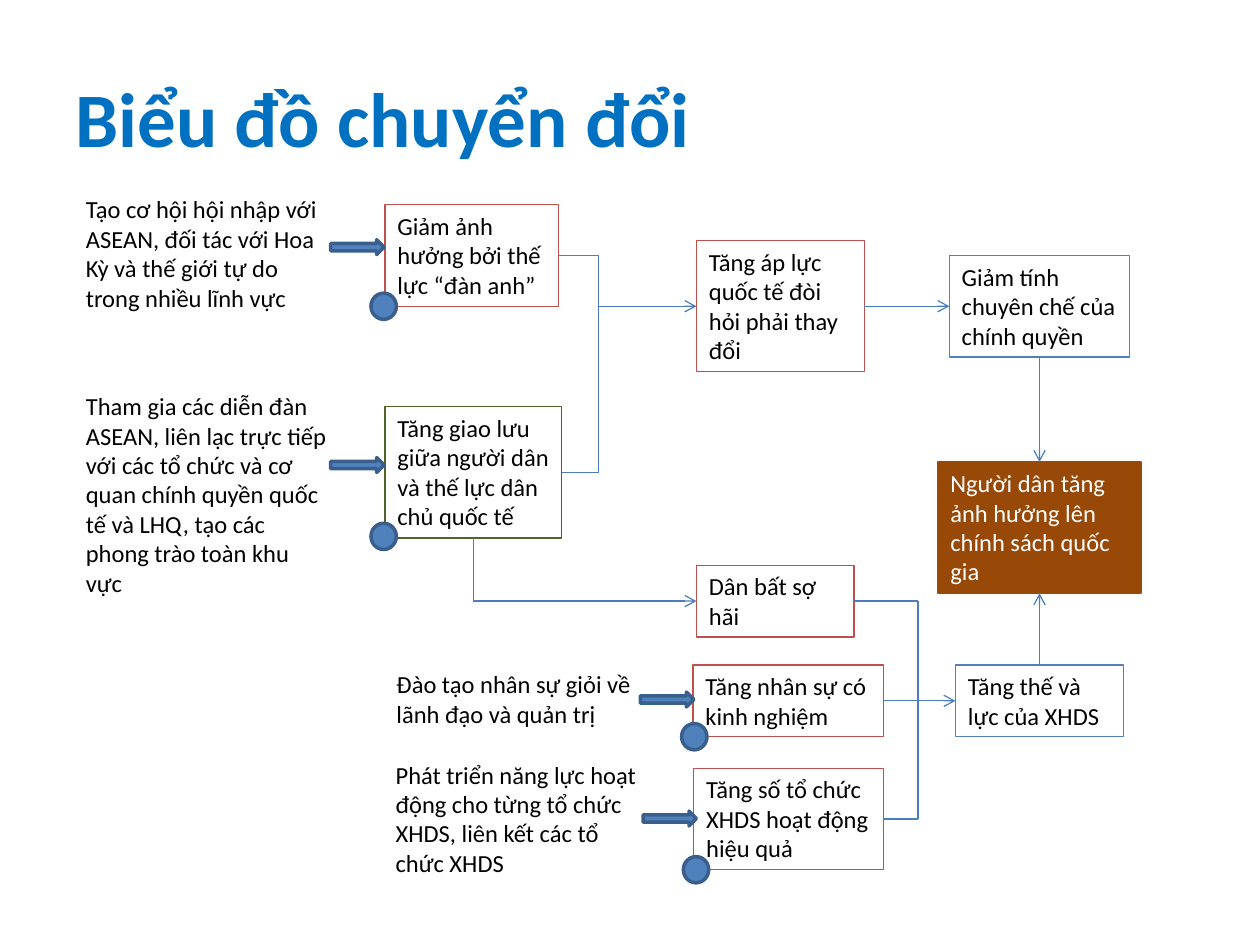
from dataclasses import dataclass
from typing import Optional, Union

import lxml.etree
import pptx
import pptx.dml.color
import pptx.enum.shapes
import pptx.enum.text
import pptx.oxml.ns
import pptx.util

Pt = pptx.util.Pt
Preset = pptx.enum.shapes.MSO_SHAPE
FONT = "Calibri"
BLACK, WHITE = "000000", "FFFFFF"
RED, BLUE, GREEN, BROWN = "C0504D", "4F81BD", "4F6228", "984807"
LINK_BLUE, MARKER_EDGE = "4B7EBC", "3A5F8C"
TOP, LEFT, BOTTOM, RIGHT = range(4)


@dataclass(frozen=True)
class Frame:
    left: float
    top: float
    width: float
    height: float


@dataclass(frozen=True)
class Box:
    name: str
    text: str
    frame: Frame
    edge: Optional[str] = None
    fill: Optional[str] = None
    ink: str = BLACK


@dataclass(frozen=True)
class Point:
    x: float
    y: float


@dataclass(frozen=True)
class Joint:
    box: str
    side: int


@dataclass(frozen=True)
class Link:
    start: Union[Point, Joint]
    end: Union[Point, Joint]
    arrow: bool = False


BOXES = [
    Box("goal", "Người dân tăng ảnh hưởng lên chính sách quốc gia",
        Frame(536, 264, 116, 75), BROWN, BROWN, WHITE),
    Box("strength", "Tăng thế và lực của XHDS", Frame(546, 380, 96, 41), BLUE),
    Box("regime", "Giảm tính chuyên chế của chính quyền", Frame(542.5, 146, 103, 58), BLUE),
    Box("pressure", "Tăng áp lực quốc tế đòi hỏi phải thay đổi",
        Frame(398, 137.5, 96, 75), RED),
    Box("organisations", "Tăng số tổ chức XHDS hoạt động hiệu quả",
        Frame(396.5, 439, 108.5, 58), RED),
    Box("staff", "Tăng nhân sự có kinh nghiệm", Frame(396, 380, 109, 41), RED),
    Box("fearless", "Dân bất sợ hãi", Frame(398, 323, 90, 41), RED),
    Box("exchange", "Tăng giao lưu giữa người dân và thế lực dân chủ quốc tế",
        Frame(220, 232.5, 101, 75), GREEN),
    Box("influence", "Giảm ảnh hưởng bởi thế lực “đàn anh”", Frame(220, 117, 99, 58), RED),
    Box("integration", "Tạo cơ hội hội nhập với ASEAN, đối tác với Hoa Kỳ và thế giới "
        "tự do trong nhiều lĩnh vực", Frame(42, 107.5, 153, 75)),
    Box("forums", "Tham gia các diễn đàn ASEAN, liên lạc trực tiếp với các tổ chức và "
        "cơ quan chính quyền quốc tế và LHQ, tạo các phong trào toàn khu vực",
        Frame(42, 220, 153, 126)),
    Box("training", "Đào tạo nhân sự giỏi về lãnh đạo và quản trị",
        Frame(219.5, 379, 153, 41)),
    Box("capacity", "Phát triển năng lực hoạt động cho từng tổ chức XHDS, "
        "liên kết các tổ chức XHDS", Frame(219, 430.5, 153, 75)),
]

UPPER_BUS, LOWER_BUS = 342, 524.5
UPPER_TOP, UPPER_MIDDLE, UPPER_BOTTOM = 146, 175, 270
LOWER_TOP, LOWER_BOTTOM = 343.5, 468
BEND = Point(270.5, LOWER_TOP)

LINKS = [
    Link(Joint("organisations", RIGHT), Point(LOWER_BUS, LOWER_BOTTOM)),
    Link(Joint("fearless", RIGHT), Point(LOWER_BUS, LOWER_TOP)),
    Link(Point(LOWER_BUS, LOWER_TOP), Point(LOWER_BUS, LOWER_BOTTOM)),
    Link(Joint("staff", RIGHT), Joint("strength", LEFT), True),
    Link(Joint("pressure", RIGHT), Joint("regime", LEFT), True),
    Link(Point(UPPER_BUS, UPPER_BOTTOM), Point(UPPER_BUS, UPPER_TOP)),
    Link(Joint("exchange", BOTTOM), BEND),
    Link(Point(UPPER_BUS, UPPER_MIDDLE), Joint("pressure", LEFT), True),
    Link(BEND, Joint("fearless", LEFT), True),
    Link(Joint("regime", BOTTOM), Joint("goal", TOP), True),
    Link(Joint("strength", TOP), Joint("goal", BOTTOM), True),
    Link(Joint("influence", RIGHT), Point(UPPER_BUS, UPPER_TOP)),
    Link(Joint("exchange", RIGHT), Point(UPPER_BUS, UPPER_BOTTOM)),
]

DOTS = [Point(212, 167.5), Point(212, 299), Point(389.5, 413.5), Point(390.5, 489.5)]
INPUT_ARROWS = [Point(189, 137), Point(189, 261.5), Point(366, 395.5), Point(367.5, 463.5)]


def color(value: str) -> pptx.dml.color.RGBColor:
    return pptx.dml.color.RGBColor.from_string(value)


def lengths(frame: Frame) -> list:
    return [Pt(value) for value in (frame.left, frame.top, frame.width, frame.height)]


def style_font(paragraph, size: float, ink: str, bold: bool = False) -> None:
    paragraph.alignment = pptx.enum.text.PP_ALIGN.LEFT
    paragraph.font.name = FONT
    paragraph.font.size = Pt(size)
    paragraph.font.bold = bold
    paragraph.font.color.rgb = color(ink)


def draw_title(slide, text: str) -> None:
    title = slide.shapes.title
    title.left, title.top, title.width, title.height = lengths(Frame(36, 21.6, 648, 90))
    title.text_frame.text = text
    title.text_frame.vertical_anchor = pptx.enum.text.MSO_ANCHOR.MIDDLE
    style_font(title.text_frame.paragraphs[0], 44, "0070C0", True)


def draw_box(slide, box: Box):
    if box.edge:
        shape = slide.shapes.add_shape(Preset.RECTANGLE, *lengths(box.frame))
        shape.shadow.inherit = False
        shape.line.color.rgb = color(box.edge)
        shape.line.width = Pt(0.75)
        if box.fill:
            shape.fill.solid()
            shape.fill.fore_color.rgb = color(box.fill)
        else:
            shape.fill.background()
    else:
        shape = slide.shapes.add_textbox(*lengths(box.frame))
    text_frame = shape.text_frame
    text_frame.text = box.text
    text_frame.word_wrap = True
    text_frame.auto_size = pptx.enum.text.MSO_AUTO_SIZE.SHAPE_TO_FIT_TEXT
    text_frame.vertical_anchor = pptx.enum.text.MSO_ANCHOR.TOP
    style_font(text_frame.paragraphs[0], 14, box.ink)
    return shape


def draw_marker(slide, preset, frame: Frame) -> None:
    shape = slide.shapes.add_shape(preset, *lengths(frame))
    shape.shadow.inherit = False
    shape.fill.solid()
    shape.fill.fore_color.rgb = color(BLUE)
    shape.line.color.rgb = color(MARKER_EDGE)
    shape.line.width = Pt(2)


def locate(end: Union[Point, Joint], shapes: dict) -> tuple:
    if isinstance(end, Point):
        return Pt(end.x), Pt(end.y)
    shape = shapes[end.box]
    across, down = {TOP: (1, 0), LEFT: (0, 1), BOTTOM: (1, 2), RIGHT: (2, 1)}[end.side]
    return shape.left + shape.width * across // 2, shape.top + shape.height * down // 2


def draw_link(slide, link: Link, shapes: dict) -> None:
    connector = slide.shapes.add_connector(
        pptx.enum.shapes.MSO_CONNECTOR.STRAIGHT,
        *locate(link.start, shapes), *locate(link.end, shapes))
    if isinstance(link.start, Joint):
        connector.begin_connect(shapes[link.start.box], link.start.side)
    if isinstance(link.end, Joint):
        connector.end_connect(shapes[link.end.box], link.end.side)
    connector.line.color.rgb = color(LINK_BLUE)
    connector.line.width = Pt(0.75)
    qn = pptx.oxml.ns.qn
    if link.arrow:
        lxml.etree.SubElement(connector.line._get_or_add_ln(), qn("a:tailEnd"), type="arrow")
    lxml.etree.SubElement(connector._element.spPr, qn("a:effectLst"))


def main() -> None:
    presentation = pptx.Presentation()
    presentation.slide_width, presentation.slide_height = Pt(720), Pt(540)
    slide = presentation.slides.add_slide(presentation.slide_layouts[5])
    draw_title(slide, "Biểu đồ chuyển đổi")
    shapes = {box.name: draw_box(slide, box) for box in BOXES}
    for link in LINKS:
        draw_link(slide, link, shapes)
    for dot in DOTS:
        draw_marker(slide, Preset.OVAL, Frame(dot.x, dot.y, 14.5, 15))
    for arrow in INPUT_ARROWS:
        draw_marker(slide, Preset.RIGHT_ARROW, Frame(arrow.x, arrow.y, 30.5, 8.5))
    presentation.save("out.pptx")


if __name__ == "__main__":
    main()
